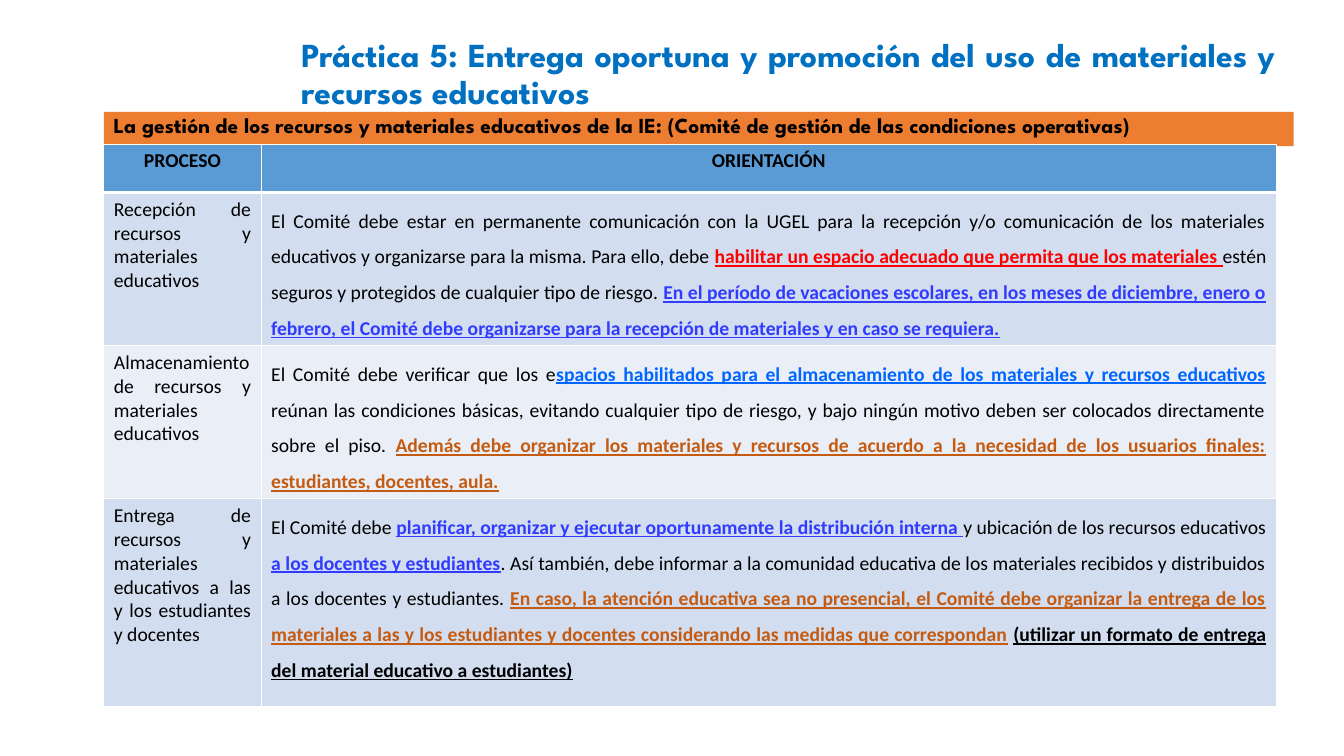
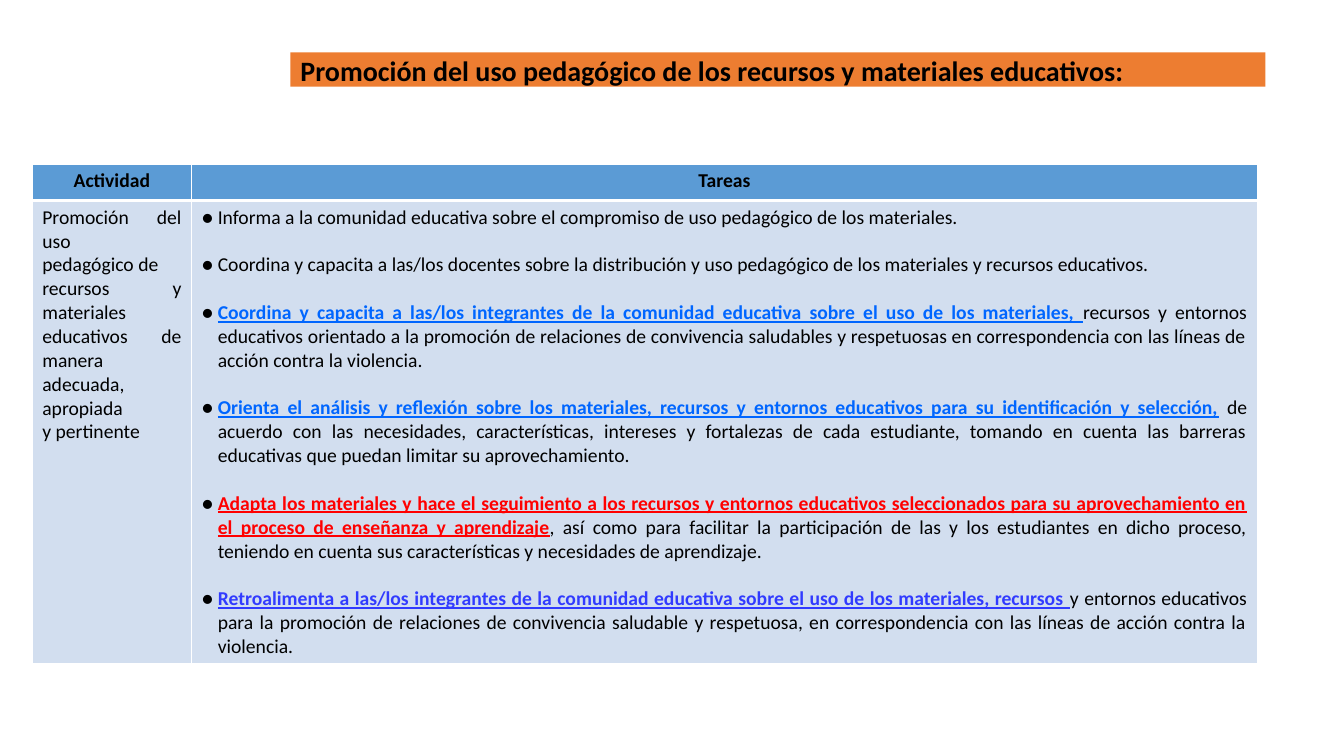
import pptx
import pptx.dml.color
import pptx.enum.shapes
import pptx.enum.text
import pptx.oxml.ns
import pptx.util
from lxml import etree

Inches = pptx.util.Inches
Pt = pptx.util.Pt
RGBColor = pptx.dml.color.RGBColor
Align = pptx.enum.text.PP_ALIGN
Anchor = pptx.enum.text.MSO_ANCHOR
qn = pptx.oxml.ns.qn

BLACK = RGBColor(0x00, 0x00, 0x00)
WHITE = RGBColor(0xFF, 0xFF, 0xFF)
TITLE = RGBColor(0x00, 0x70, 0xC0)
ORANGE = RGBColor(0xED, 0x7D, 0x31)
HEAD = RGBColor(0x5B, 0x9B, 0xD5)
ROWS = [RGBColor(0xD2, 0xDE, 0xEF), RGBColor(0xEA, 0xEF, 0xF7)]
RED = RGBColor(0xFF, 0x00, 0x00)
BLUE = RGBColor(0x00, 0x66, 0xFF)
VIOLET = RGBColor(0x31, 0x3B, 0xFF)
BROWN = RGBColor(0xC5, 0x5A, 0x11)

BODY = "Calibri"
DISPLAY = "League Spartan"


def add_dot(para, hang=0.16):
    props = para._p.get_or_add_pPr()
    props.set("marL", str(Inches(hang)))
    props.set("indent", str(-Inches(hang)))
    tint = etree.SubElement(props, qn("a:buClr"))
    etree.SubElement(tint, qn("a:srgbClr"), val=str(BLACK))
    etree.SubElement(props, qn("a:buFont"), typeface=BODY)
    etree.SubElement(props, qn("a:buChar"), char="●")


def write(frame, text, size=14, font=BODY, color=BLACK, bold=False,
          align=Align.JUSTIFY, line=1.0, gap=0, dots=False):
    """Take a string or a list of paragraphs; a paragraph is a string or a
    list of runs, and a run is a string or a (string, accent colour) pair."""
    paras = [text] if isinstance(text, str) else text
    for i, runs in enumerate(paras):
        para = frame.add_paragraph() if i else frame.paragraphs[0]
        if dots:
            add_dot(para)
        para.alignment = align
        para.line_spacing = line
        para.space_before = Pt(gap if i else 0)
        for item in [runs] if isinstance(runs, str) else runs:
            words, accent = (item, None) if isinstance(item, str) else item
            run = para.add_run()
            run.text = words
            run.font.name = font
            run.font.size = Pt(size)
            run.font.bold = bold or accent is not None
            run.font.underline = accent is not None
            run.font.color.rgb = accent or color


def add_edges(cell, base):
    """Draw white cell borders, with the bottom one as wide as base points."""
    props = cell._tc.get_or_add_tcPr()
    for side, width in (("L", 1), ("R", 1), ("T", 1), ("B", base)):
        edge = etree.SubElement(props, qn("a:ln" + side), w=str(Pt(width)))
        fill = etree.SubElement(edge, qn("a:solidFill"))
        etree.SubElement(fill, qn("a:srgbClr"), val=str(WHITE))


class Deck:
    def __init__(self):
        self.file = pptx.Presentation()
        self.file.slide_width = Inches(13.33)
        self.file.slide_height = Inches(7.5)
        self.slide = None

    def start(self):
        self.slide = self.file.slides.add_slide(self.file.slide_layouts[5])

    def place(self, shape, box, anchor):
        shape.left, shape.top, shape.width, shape.height = map(Inches, box)
        frame = shape.text_frame
        frame.word_wrap = True
        frame.auto_size = pptx.enum.text.MSO_AUTO_SIZE.NONE
        frame.vertical_anchor = anchor
        return frame

    def title(self, text, box):
        frame = self.place(self.slide.shapes.title, box, Anchor.MIDDLE)
        write(frame, text, size=24, font=DISPLAY, color=TITLE, bold=True, line=0.9)

    def band(self, text, box, shape=None, **form):
        """Fill an orange strip; without a shape, a new rectangle is added."""
        if shape is None:
            shape = self.slide.shapes.add_shape(
                pptx.enum.shapes.MSO_SHAPE.RECTANGLE, *map(Inches, box))
            shape.shadow.inherit = False
        shape.fill.solid()
        shape.fill.fore_color.rgb = ORANGE
        shape.line.fill.background()
        frame = self.place(shape, box, Anchor.TOP)
        write(frame, text, bold=True, align=Align.LEFT, **form)

    def table(self, spot, cols, heights, rows, **form):
        """Build a table; form applies to the last column below the header."""
        box = (*spot, sum(cols), sum(heights))
        grid = self.slide.shapes.add_table(
            len(rows), len(cols), *map(Inches, box)).table
        for col, width in zip(grid.columns, cols):
            col.width = Inches(width)
        for r, (row, height) in enumerate(zip(rows, heights)):
            grid.rows[r].height = Inches(height)
            for c, text in enumerate(row):
                cell = grid.cell(r, c)
                add_edges(cell, 1 if r else 3)
                cell.fill.solid()
                cell.fill.fore_color.rgb = ROWS[(r - 1) % 2] if r else HEAD
                if r == 0:
                    style = {"bold": True, "align": Align.CENTER}
                else:
                    style = form if c == len(cols) - 1 else {}
                write(cell.text_frame, text, **style)


STEPS = [
    ("PROCESO", "ORIENTACIÓN"),
    ("Recepción de recursos y materiales educativos", [[
        "El Comité debe estar en permanente comunicación con la UGEL para la recepción y/o "
        "comunicación de los materiales educativos y organizarse para la misma. Para ello, debe ",
        ("habilitar un espacio adecuado que permita que los materiales ", RED),
        "estén seguros y protegidos de cualquier tipo de riesgo. ",
        ("En el período de vacaciones escolares, en los meses de diciembre, enero o febrero, el "
         "Comité debe organizarse para la recepción de materiales y en caso se requiera.", VIOLET),
    ]]),
    ("Almacenamiento de recursos y materiales educativos", [[
        "El Comité debe verificar que los e",
        ("spacios habilitados para el almacenamiento de los materiales y recursos educativos", BLUE),
        " reúnan las condiciones básicas, evitando cualquier tipo de riesgo, y bajo ningún motivo "
        "deben ser colocados directamente sobre el piso. ",
        ("Además debe organizar los materiales y recursos de acuerdo a la necesidad de los "
         "usuarios finales: estudiantes, docentes, aula.", BROWN),
    ]]),
    ("Entrega de recursos y materiales educativos a las y los estudiantes y docentes", [[
        "El Comité debe ",
        ("planificar, organizar y ejecutar oportunamente la distribución interna ", VIOLET),
        "y ubicación de los recursos educativos ",
        ("a los docentes y estudiantes", VIOLET),
        ". Así también, debe informar a la comunidad educativa de los materiales recibidos y "
        "distribuidos a los docentes y estudiantes. ",
        ("En caso, la atención educativa sea no presencial, el Comité debe organizar la entrega "
         "de los materiales a las y los estudiantes y docentes considerando las medidas que "
         "correspondan", BROWN),
        " ",
        ("(utilizar un formato de entrega del material educativo a estudiantes)", BLACK),
    ]]),
]

TASKS = [
    ("Actividad", "Tareas"),
    (["Promoción del uso", "pedagógico de", "recursos y materiales", "educativos de manera",
      "adecuada, apropiada", "y pertinente"], [
        "Informa a la comunidad educativa sobre el compromiso de uso pedagógico de los materiales.",
        "Coordina y capacita a las/los docentes sobre la distribución y uso pedagógico de los "
        "materiales y recursos educativos.",
        [("Coordina y capacita a las/los integrantes de la comunidad educativa sobre el uso de "
          "los materiales, ", BLUE),
         "recursos y entornos educativos orientado a la promoción de relaciones de convivencia "
         "saludables y respetuosas en correspondencia con las líneas de acción contra la "
         "violencia."],
        [("Orienta el análisis y reflexión sobre los materiales, recursos y entornos educativos "
          "para su identificación y selección,", BLUE),
         " de acuerdo con las necesidades, características, intereses y fortalezas de cada "
         "estudiante, tomando en cuenta las barreras educativas que puedan limitar su "
         "aprovechamiento."],
        [("Adapta los materiales y hace el seguimiento a los recursos y entornos educativos "
          "seleccionados para su aprovechamiento en el proceso de enseñanza y aprendizaje", RED),
         ", así como para facilitar la participación de las y los estudiantes en dicho proceso, "
         "teniendo en cuenta sus características y necesidades de aprendizaje."],
        [("Retroalimenta a las/los integrantes de la comunidad educativa sobre el uso de los "
          "materiales, recursos ", VIOLET),
         "y entornos educativos para la promoción de relaciones de convivencia saludable y "
         "respetuosa, en correspondencia con las líneas de acción contra la violencia."],
    ]),
]


def main():
    deck = Deck()

    deck.start()
    deck.title("Práctica 5: Entrega oportuna y promoción del uso de materiales y "
               "recursos educativos", (2.89, 0.21, 9.86, 1.07))
    deck.band("La gestión de los recursos y materiales educativos de la IE: (Comité de gestión "
              "de las condiciones operativas)", (1.03, 1.11, 11.8, 0.34),
              size=15.3, font=DISPLAY, line=0.8)
    deck.table((1.03, 1.43), (1.56, 10.07), (0.48, 1.51, 1.51, 2.06), STEPS, line=1.5)

    deck.start()
    deck.band("Promoción del uso pedagógico de los recursos y materiales educativos:",
              (2.88, 0.52, 9.67, 0.34), shape=deck.slide.shapes.title, size=20, line=0.9)
    deck.table((0.32, 1.63), (1.58, 10.57), (0.36, 4.48), TASKS, gap=17, dots=True)

    deck.file.save("out.pptx")


if __name__ == "__main__":
    main()
